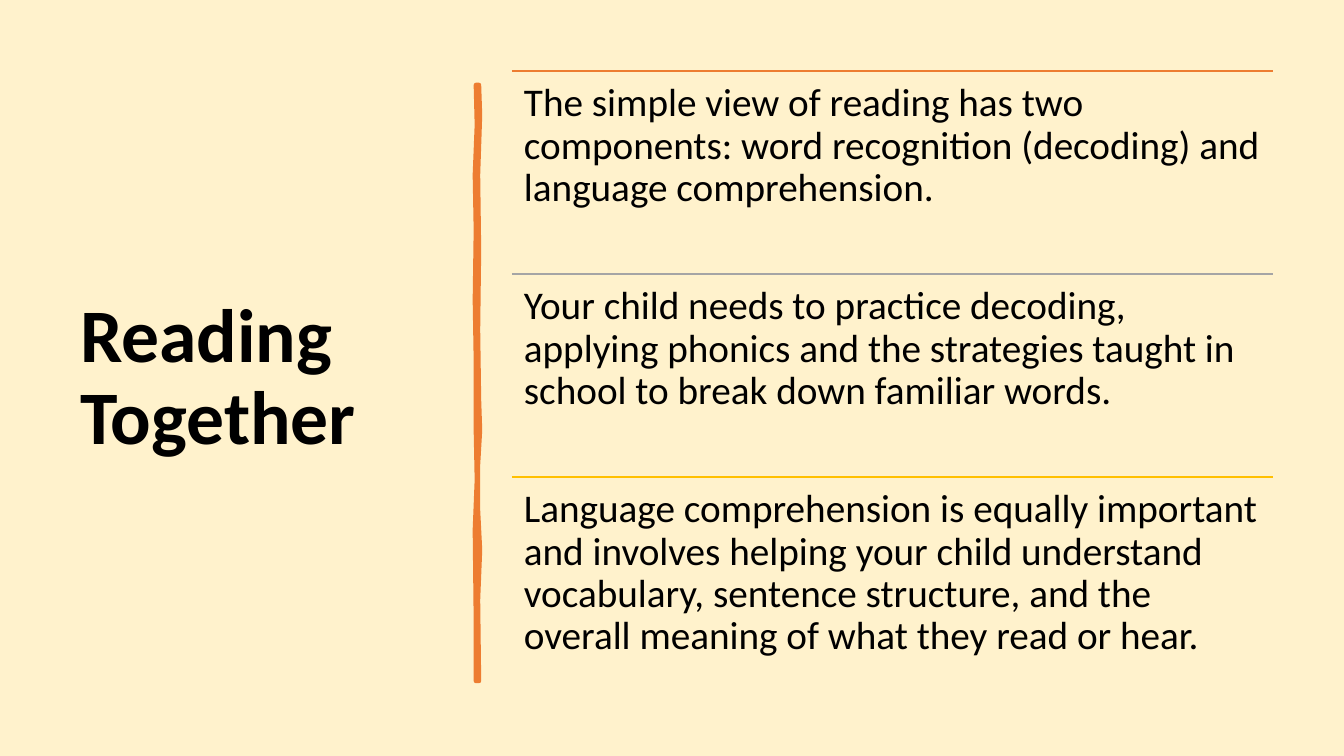
import pptx
import pptx.dml.color
import pptx.enum.shapes
import pptx.enum.text
import pptx.oxml
import pptx.oxml.ns
import pptx.util

PX = 914400 / 100.8

THEME = {
    "font": "Calibri",
    "background": "FFF2CC",
    "text": "000000",
    "brush": "ED7D31",
    "rules": ["ED7D31", "A5A5A5", "FFC000"],
    "title_size": 54,
    "body_size": 28,
    "brush_width": 3.25,
    "rule_width": 1,
}

STATEMENTS = [
    "The simple view of reading has two components: word recognition (decoding) and language comprehension.",
    "Your child needs to practice decoding, applying phonics and the strategies taught in school to break down familiar words.",
    "Language comprehension is equally important and involves helping your child understand vocabulary, sentence structure, and the overall meaning of what they read or hear.",
]

BRUSH_RIGHT = [(479, 85), (480, 115), (478, 175), (479, 250), (478, 330),
               (479, 400), (480, 430), (478, 465), (478, 510), (480, 550),
               (478, 600), (479, 681)]
BRUSH_LEFT = [(476, 681), (476, 620), (475, 530), (477, 480), (476, 430),
              (476, 360), (475, 300), (476, 230), (475, 175), (477, 125),
              (476, 85)]


def px(length):
    return pptx.util.Emu(round(length * PX))


def style_text(paragraph, size, bold):
    paragraph.alignment = pptx.enum.text.PP_ALIGN.LEFT
    paragraph.line_spacing = 0.9
    paragraph.font.name = THEME["font"]
    paragraph.font.size = pptx.util.Pt(size)
    paragraph.font.bold = bold
    paragraph.font.color.rgb = pptx.dml.color.RGBColor.from_string(THEME["text"])


presentation = pptx.Presentation()
presentation.slide_width = px(1344)
presentation.slide_height = px(756)
slide = presentation.slides.add_slide(presentation.slide_layouts[5])
slide.background.fill.solid()
slide.background.fill.fore_color.rgb = pptx.dml.color.RGBColor.from_string(THEME["background"])

title = slide.shapes.title
title.left, title.top, title.width, title.height = px(70), px(71), px(377), px(616)
title.text_frame.text = "Reading Together"
title.text_frame.auto_size = pptx.enum.text.MSO_AUTO_SIZE.NONE
title.text_frame.vertical_anchor = pptx.enum.text.MSO_ANCHOR.MIDDLE
style_text(title.text_frame.paragraphs[0], THEME["title_size"], True)

brush_color = pptx.dml.color.RGBColor.from_string(THEME["brush"])
builder = slide.shapes.build_freeform(*BRUSH_RIGHT[0], scale=PX)
builder.add_line_segments(BRUSH_RIGHT[1:] + BRUSH_LEFT, close=True)
brush = builder.convert_to_shape()
brush.shadow.inherit = False
brush.fill.solid()
brush.fill.fore_color.rgb = brush_color
brush.line.color.rgb = brush_color
brush.line.width = pptx.util.Pt(THEME["brush_width"])
pptx.oxml.ns.qn("a:round")
brush.line._get_or_add_ln().append(
    pptx.oxml.parse_xml(f'<a:round {pptx.oxml.ns.nsdecls("a")}/>'))

LEFT, TOP, WIDTH, ROW = 512, 71, 761, 203
for index, (statement, rule_color) in enumerate(zip(STATEMENTS, THEME["rules"])):
    top = TOP + index * ROW
    rule = slide.shapes.add_connector(
        pptx.enum.shapes.MSO_CONNECTOR.STRAIGHT, px(LEFT), px(top), px(LEFT + WIDTH), px(top))
    rule.line.color.rgb = pptx.dml.color.RGBColor.from_string(rule_color)
    rule.line.width = pptx.util.Pt(THEME["rule_width"])
    rule._element.spPr.append(
        pptx.oxml.parse_xml(f'<a:effectLst {pptx.oxml.ns.nsdecls("a")}/>'))

    box = slide.shapes.add_textbox(px(LEFT), px(top), px(WIDTH), px(ROW))
    frame = box.text_frame
    frame.word_wrap = True
    frame.margin_left = frame.margin_top = frame.margin_right = frame.margin_bottom = px(12)
    frame.text = statement
    style_text(frame.paragraphs[0], THEME["body_size"], False)

presentation.save("out.pptx")
